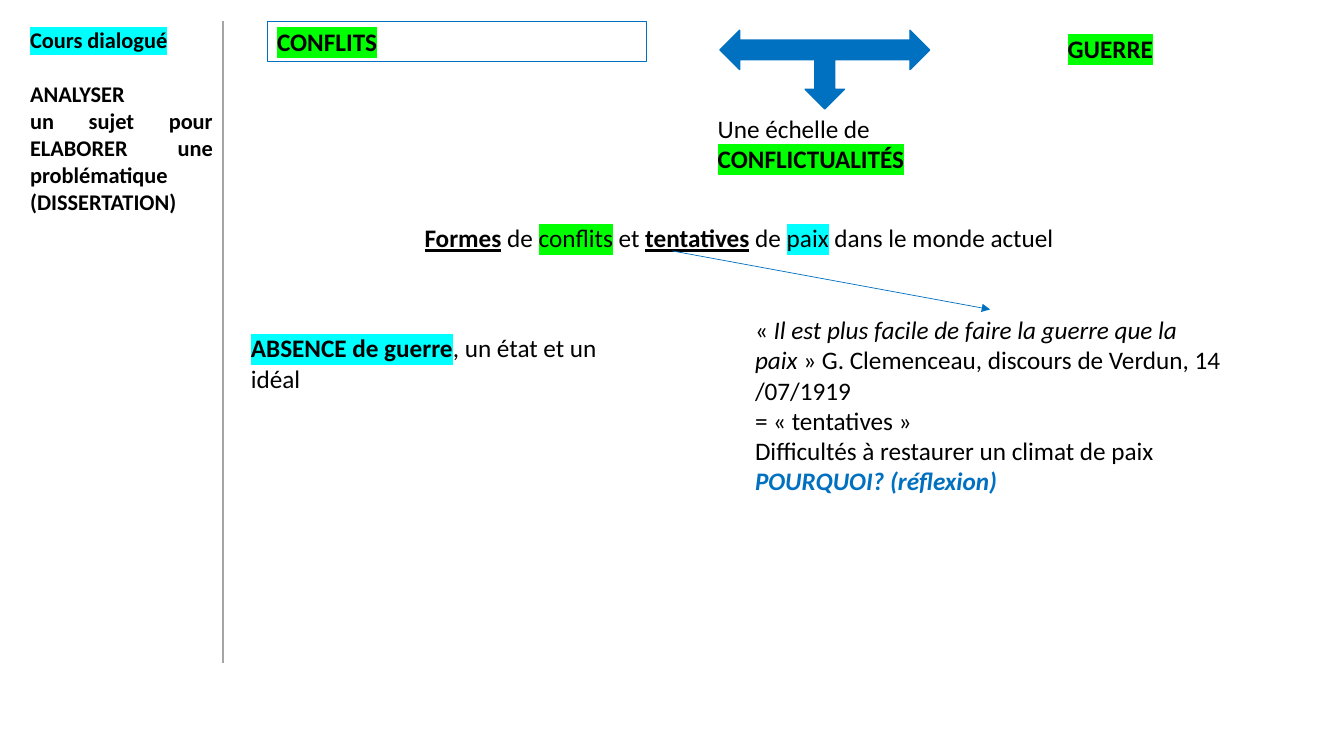
from lxml import etree
from pptx import Presentation
from pptx.dml.color import RGBColor
from pptx.enum.shapes import MSO_CONNECTOR as Connector, MSO_SHAPE as Shape
from pptx.enum.text import MSO_ANCHOR as Anchor, PP_ALIGN as Align
from pptx.oxml.ns import qn
from pptx.util import Emu, Pt

EMU_PER_PX = 9144  # 100 px to the inch
FONT = "Calibri"
COLORS = {
    "black": "000000",
    "blue": "0070C0",
    "gray": "A5A5A5",
    "cyan": "00FFFF",
    "green": "00FF00",
}


def px(length):
    return Emu(length * EMU_PER_PX)


def rgb(name):
    return RGBColor.from_string(COLORS[name])


def highlight(run, color):
    """Mark a run; the element has to follow the run's solid fill."""
    element = etree.Element(qn("a:highlight"))
    etree.SubElement(element, qn("a:srgbClr"), val=COLORS[color])
    run._r.rPr.find(qn("a:solidFill")).addnext(element)


def add_run(paragraph, text, styles, size):
    """Styles are words: b, i, u, a highlight (cyan, green) or the text colour blue."""
    run = paragraph.add_run()
    run.text = text
    font = run.font
    font.name, font.size = FONT, Pt(size)
    font.bold, font.italic, font.underline = (flag in styles for flag in "biu")
    font.color.rgb = rgb("blue" if "blue" in styles else "black")
    for color in ("cyan", "green"):
        if color in styles:
            highlight(run, color)


def write(shape, paragraphs, size=18, align=Align.LEFT):
    """Each paragraph is a list of (text, styles) pairs."""
    frame = shape.text_frame
    frame.word_wrap = True
    frame.vertical_anchor = Anchor.TOP
    for index, runs in enumerate(paragraphs):
        paragraph = frame.add_paragraph() if index else frame.paragraphs[0]
        paragraph.alignment = align
        for text, styles in runs:
            add_run(paragraph, text, styles.split(), size)


def add_text(slide, box, paragraphs, **options):
    shape = slide.shapes.add_textbox(*map(px, box))
    write(shape, paragraphs, **options)
    return shape


def add_shape(slide, kind, box, line_width, fill=None):
    shape = slide.shapes.add_shape(kind, *map(px, box))
    shape.shadow.inherit = False
    if fill:
        shape.fill.solid()
        shape.fill.fore_color.rgb = rgb(fill)
    else:
        shape.fill.background()
    shape.line.color.rgb = rgb("blue")
    shape.line.width = Pt(line_width)
    return shape


def add_line(slide, ends, color, width, arrow=False):
    line = slide.shapes.add_connector(Connector.STRAIGHT, *map(px, ends))
    line.line.color.rgb = rgb(color)
    line.line.width = Pt(width)
    if arrow:
        etree.SubElement(line.line._get_or_add_ln(), qn("a:tailEnd"), type="triangle")
    etree.SubElement(line._element.spPr, qn("a:effectLst"))


def add_sidebar(slide):
    sidebar = add_text(slide, (20, 21, 201, 199), [
        [("Cours dialogué", "b cyan")],
        [("ANALYSER", "b")],
        [("un sujet pour ELABORER une problématique", "b")],
        [("(DISSERTATION)", "b")],
    ], size=16, align=Align.JUSTIFY)
    sidebar.text_frame.paragraphs[1].space_before = Pt(19.5)
    add_line(slide, (221, 21, 221, 658), "gray", 1)


def add_conflict_scale(slide):
    conflicts = add_shape(slide, Shape.RECTANGLE, (265, 21, 376, 40), 0.75)
    write(conflicts, [[("CONFLITS", "b green")]])
    add_text(slide, (1049, 28, 182, 40), [[("GUERRE", "b green")]])
    add_text(slide, (702, 107, 258, 71),
             [[("Une échelle de ", ""), ("CONFLICTUALITÉS", "b green")]])
    arrow = add_shape(slide, Shape.LEFT_RIGHT_UP_ARROW, (714, 30, 208, 78), 1, "blue")
    arrow.rotation = 180


def add_subject(slide):
    add_text(slide, (343, 216, 780, 40), [[
        ("Formes", "b u"), (" de ", ""), ("conflits", "green"), (" et ", ""),
        ("tentatives", "b u"), (" de ", ""), ("paix", "cyan"),
        (" dans le monde actuel", ""),
    ]], align=Align.CENTER)


def add_peace_notes(slide):
    add_text(slide, (239, 325, 402, 101),
             [[("ABSENCE de guerre", "b cyan"), (", un état et un idéal", "")]])
    add_text(slide, (739, 307, 484, 192), [
        [("« ", ""), ("Il est plus facile de faire la guerre que la paix ", "i"),
         ("» G. Clemenceau, discours de Verdun, 14 /07/1919", "")],
        [("= « tentatives »", "")],
        [("Difficultés à restaurer un climat de paix", "")],
        [("POURQUOI? (réflexion)", "b i blue")],
    ])
    add_line(slide, (667, 249, 982, 307), "blue", 0.5, arrow=True)


def main():
    presentation = Presentation()
    presentation.slide_width, presentation.slide_height = px(1333), px(750)
    slide = presentation.slides.add_slide(presentation.slide_layouts[6])
    add_sidebar(slide)
    add_subject(slide)
    add_conflict_scale(slide)
    add_peace_notes(slide)
    presentation.save("out.pptx")


if __name__ == "__main__":
    main()
